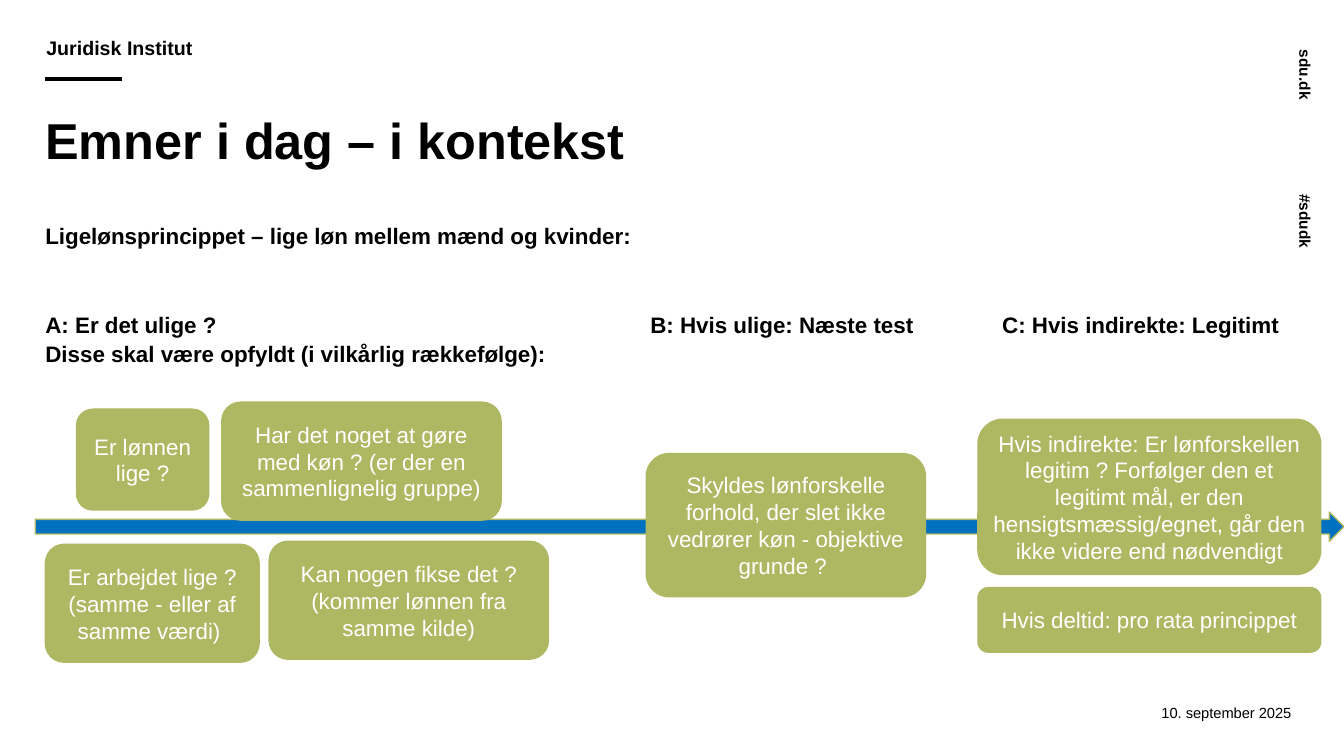
from typing import NamedTuple

import pptx
import pptx.dml.color
import pptx.enum.shapes
import pptx.enum.text
import pptx.oxml
import pptx.oxml.ns
import pptx.util
from lxml import etree

Inches = pptx.util.Inches
Pt = pptx.util.Pt
RGBColor = pptx.dml.color.RGBColor
MSO_SHAPE = pptx.enum.shapes.MSO_SHAPE
ALIGN = pptx.enum.text.PP_ALIGN
ANCHOR = pptx.enum.text.MSO_ANCHOR
qn = pptx.oxml.ns.qn

BLACK = RGBColor(0x00, 0x00, 0x00)
WHITE = RGBColor(0xFF, 0xFF, 0xFF)
OLIVE = RGBColor(0xAE, 0xB8, 0x62)
BLUE = RGBColor(0x00, 0x70, 0xC0)
FONT = "Arial"
CORNER = 0.16


class Box(NamedTuple):
    left: float
    top: float
    width: float
    height: float


class Label(NamedTuple):
    text: str
    box: Box
    size: float
    bold: bool = True
    align: ALIGN = ALIGN.LEFT
    anchor: ANCHOR = ANCHOR.BOTTOM
    insets: tuple = (0, 0, 0, 0)
    rotation: int = 0


class Step(NamedTuple):
    text: str
    box: Box


class Line(NamedTuple):
    text: str
    space_before: float


LABELS = [
    Label("sdu.dk", Box(12.56, 0.79, 1, 0.41), 11, rotation=90),
    Label("#sdudk", Box(12.56, 2.22, 1, 0.41), 11, rotation=90),
    Label("10. september 2025", Box(10.26, 6.97, 2.63, 0.2), 10.5, bold=False,
          align=ALIGN.RIGHT, anchor=ANCHOR.MIDDLE, insets=(0.08,) * 4),
    Label("Juridisk Institut", Box(0.45, 0.38, 5.54, 0.31), 14,
          insets=(0.01, 0, 0, 0.1)),
    Label("B: Hvis ulige: Næste test", Box(6.45, 3.07, 3.2, 0.3), 16, anchor=ANCHOR.MIDDLE),
    Label("C: Hvis indirekte: Legitimt", Box(9.94, 3.07, 3.2, 0.3), 16, anchor=ANCHOR.MIDDLE),
]

BODY_LINES = [
    Line("Ligelønsprincippet – lige løn mellem mænd og kvinder:", 0),
    Line("A: Er det ulige ?", 42),
    Line("Disse skal være opfyldt (i vilkårlig rækkefølge):", 0),
]

STEPS = [
    Step("Er lønnen lige ?", Box(0.76, 4.06, 1.31, 1)),
    Step("Er arbejdet lige ? (samme - eller af samme værdi) ", Box(0.45, 5.4, 2.12, 1.17)),
    Step("Har det noget at gøre med køn ? (er der en sammenlignelig gruppe)",
         Box(2.2, 3.99, 2.77, 1.17)),
    Step("Kan nogen fikse det ? (kommer lønnen fra samme kilde)", Box(2.67, 5.37, 2.77, 1.17)),
    Step("Skyldes lønforskelle forhold, der slet ikke vedrører køn - objektive grunde ? ",
         Box(6.41, 4.5, 2.77, 1.42)),
    Step("Hvis indirekte: Er lønforskellen legitim ? Forfølger den et legitimt mål, er den "
         "hensigtsmæssig/egnet, går den ikke videre end nødvendigt", Box(9.7, 4.16, 3.4, 1.54)),
    Step("Hvis deltid: pro rata princippet", Box(9.7, 5.83, 3.4, 0.64)),
]


def place(sp, box: Box) -> None:
    sp.left, sp.top, sp.width, sp.height = map(Inches, box)


def set_frame(tf, anchor: ANCHOR, insets: tuple = (0, 0, 0, 0)) -> None:
    tf.word_wrap = True
    tf.auto_size = pptx.enum.text.MSO_AUTO_SIZE.NONE
    tf.vertical_anchor = anchor
    tf.margin_left, tf.margin_top, tf.margin_right, tf.margin_bottom = map(Inches, insets)


def format_paragraph(p, size: float, color: RGBColor, bold: bool, align: ALIGN) -> None:
    p.alignment = align
    for r in p.runs:
        r.font.name = FONT
        r.font.size = Pt(size)
        r.font.bold = bold
        r.font.color.rgb = color


def add_label(slide, label: Label) -> None:
    sp = slide.shapes.add_textbox(*map(Inches, label.box))
    sp.rotation = label.rotation
    tf = sp.text_frame
    tf.text = label.text
    set_frame(tf, label.anchor, label.insets)
    format_paragraph(tf.paragraphs[0], label.size, BLACK, label.bold, label.align)


def add_block(slide, kind: MSO_SHAPE, box: Box, fill: RGBColor):
    sp = slide.shapes.add_shape(kind, *map(Inches, box))
    sp.shadow.inherit = False
    sp.fill.solid()
    sp.fill.fore_color.rgb = fill
    sp.line.color.rgb = OLIVE
    sp.line.width = Pt(1)
    return sp


def add_step(slide, step: Step) -> None:
    sp = add_block(slide, MSO_SHAPE.ROUNDED_RECTANGLE, step.box, OLIVE)
    sp.adjustments[0] = CORNER
    tf = sp.text_frame
    tf.text = step.text
    set_frame(tf, ANCHOR.MIDDLE, (0.08,) * 4)
    format_paragraph(tf.paragraphs[0], 16, WHITE, False, ALIGN.CENTER)


def add_rule(slide) -> None:
    rule = slide.shapes.add_connector(
        pptx.enum.shapes.MSO_CONNECTOR.STRAIGHT,
        Inches(0.45), Inches(0.78), Inches(1.21), Inches(0.78))
    rule.line.color.rgb = BLACK
    rule.line.width = Pt(3)
    etree.SubElement(rule._element.spPr, qn("a:effectLst"))


def fill_title(slide) -> None:
    title = slide.shapes.title
    place(title, Box(0.45, 1.12, 11.99, 0.73))
    tf = title.text_frame
    tf.text = "Emner i dag – i kontekst"
    set_frame(tf, ANCHOR.TOP)
    format_paragraph(tf.paragraphs[0], 36, BLACK, True, ALIGN.LEFT)
    tf.paragraphs[0].line_spacing = 0.97


def fill_body(slide) -> None:
    body = slide.placeholders[1]
    place(body, Box(0.45, 2.18, 12.88, 4.23))
    tf = body.text_frame
    tf.text = "\n".join(line.text for line in BODY_LINES)
    set_frame(tf, ANCHOR.TOP)
    for p, line in zip(tf.paragraphs, BODY_LINES):
        pPr = p._p.get_or_add_pPr()
        pPr.set("marL", "0")
        pPr.set("indent", "0")
        etree.SubElement(pPr, qn("a:buNone"))
        p.line_spacing = 1.1
        p.space_before = Pt(line.space_before)
        p.space_after = Pt(0)
        format_paragraph(p, 16, BLACK, True, ALIGN.LEFT)


def main() -> None:
    prs = pptx.Presentation()
    prs.slide_width = Inches(13.33)
    prs.slide_height = Inches(7.5)
    slide = prs.slides.add_slide(prs.slide_layouts[1])
    fill_title(slide)
    fill_body(slide)
    add_rule(slide)
    for label in LABELS:
        add_label(slide, label)
    add_block(slide, MSO_SHAPE.RIGHT_ARROW, Box(0.35, 5.08, 12.98, 0.29), BLUE)
    for step in STEPS:
        add_step(slide, step)
    prs.save("out.pptx")


if __name__ == "__main__":
    main()
